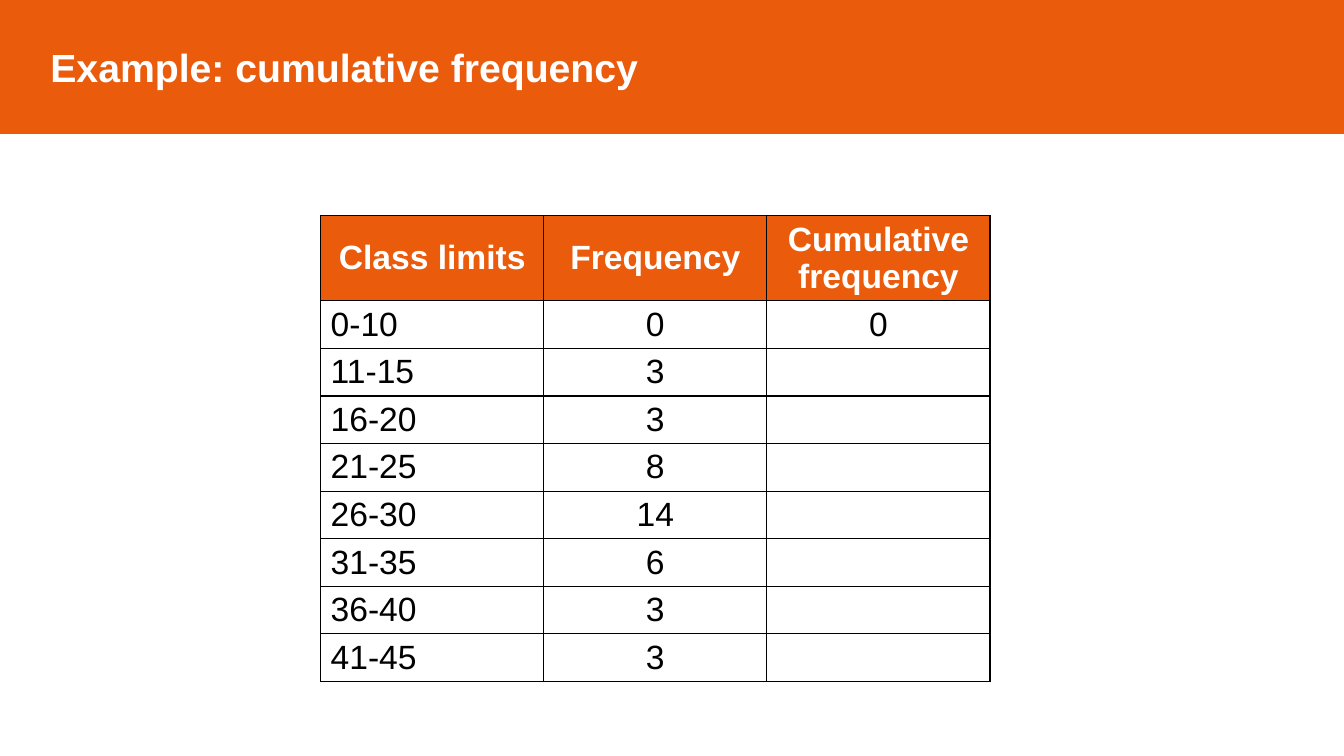
import pptx
import pptx.dml.color
import pptx.enum.shapes
import pptx.enum.text
import pptx.oxml
import pptx.oxml.ns
import pptx.util
import lxml.etree

ORANGE = pptx.dml.color.RGBColor(0xEA, 0x5B, 0x0C)
WHITE = pptx.dml.color.RGBColor(0xFF, 0xFF, 0xFF)
BLACK = pptx.dml.color.RGBColor(0x00, 0x00, 0x00)
CENTER = pptx.enum.text.PP_ALIGN.CENTER
LEFT = pptx.enum.text.PP_ALIGN.LEFT
MIDDLE = pptx.enum.text.MSO_ANCHOR.MIDDLE
TOP = pptx.enum.text.MSO_ANCHOR.TOP
Inches = pptx.util.Inches

SLIDE_WIDTH, SLIDE_HEIGHT = 13.33, 7.5
BANNER_HEIGHT = 1.32
HEADER_HEIGHT, CLASS_HEIGHT = 0.84, 0.47

HEADINGS = ("Class limits", "Frequency", "Cumulative frequency")
CLASSES = (
    ("0-10", "0", "0"),
    ("11-15", "3", ""),
    ("16-20", "3", ""),
    ("21-25", "8", ""),
    ("26-30", "14", ""),
    ("31-35", "6", ""),
    ("36-40", "3", ""),
    ("41-45", "3", ""),
)


def write_text(frame, text, size=24, color=BLACK, bold=False, align=LEFT):
    """Write one formatted paragraph into a text frame."""
    paragraph = frame.paragraphs[0]
    paragraph.alignment = align
    if text:
        run = paragraph.add_run()
        run.text = text
        run.font.name = "Arial"
        run.font.size = pptx.util.Pt(size)
        run.font.bold = bold
        run.font.color.rgb = color


def fill_cell(cell, fill):
    """Give a cell a solid fill and a thin black border on every side."""
    properties = cell._tc.get_or_add_tcPr()
    for side in ("a:lnL", "a:lnR", "a:lnT", "a:lnB"):
        border = lxml.etree.SubElement(properties, pptx.oxml.ns.qn(side), w=str(pptx.util.Pt(1)))
        solid = lxml.etree.SubElement(border, pptx.oxml.ns.qn("a:solidFill"))
        lxml.etree.SubElement(solid, pptx.oxml.ns.qn("a:srgbClr"), val=str(BLACK))
    cell.fill.solid()
    cell.fill.fore_color.rgb = fill


def add_banner(slide, left, top, width, height):
    """Draw the title banner in the given box."""
    banner = slide.shapes.add_shape(
        pptx.enum.shapes.MSO_SHAPE.RECTANGLE,
        Inches(left), Inches(top), Inches(width), Inches(height))
    banner.shadow.inherit = False
    banner.fill.solid()
    banner.fill.fore_color.rgb = ORANGE
    banner.line.color.rgb = ORANGE
    banner.line.width = pptx.util.Pt(1)
    banner.text_frame.margin_left = Inches(0.5)
    banner.text_frame.vertical_anchor = MIDDLE
    banner.text_frame.word_wrap = True
    write_text(banner.text_frame, "Example: cumulative frequency", size=28, color=WHITE, bold=True)


def add_frequency_table(slide, left, top, width):
    """Draw the frequency table with equal columns across the given width."""
    rows = (HEADINGS,) + CLASSES
    height = HEADER_HEIGHT + CLASS_HEIGHT * len(CLASSES)
    table = slide.shapes.add_table(
        len(rows), len(HEADINGS),
        Inches(left), Inches(top), Inches(width), Inches(height)).table
    table.horz_banding = False
    for column in table.columns:
        column.width = Inches(width / len(HEADINGS))
    for row_index, values in enumerate(rows):
        is_header = row_index == 0
        table.rows[row_index].height = Inches(HEADER_HEIGHT if is_header else CLASS_HEIGHT)
        for column_index, value in enumerate(values):
            cell = table.cell(row_index, column_index)
            fill_cell(cell, ORANGE if is_header else WHITE)
            cell.vertical_anchor = MIDDLE if is_header else TOP
            write_text(
                cell.text_frame, value, bold=is_header,
                color=WHITE if is_header else BLACK,
                align=CENTER if is_header or column_index else LEFT)


def main():
    """Build the slide and save it."""
    deck = pptx.Presentation()
    deck.slide_width = Inches(SLIDE_WIDTH)
    deck.slide_height = Inches(SLIDE_HEIGHT)
    slide = deck.slides.add_slide(deck.slide_layouts[6])
    add_banner(slide, 0, 0, SLIDE_WIDTH, BANNER_HEIGHT)
    add_frequency_table(slide, 3.18, 2.14, 6.64)
    deck.save("out.pptx")


if __name__ == "__main__":
    main()
